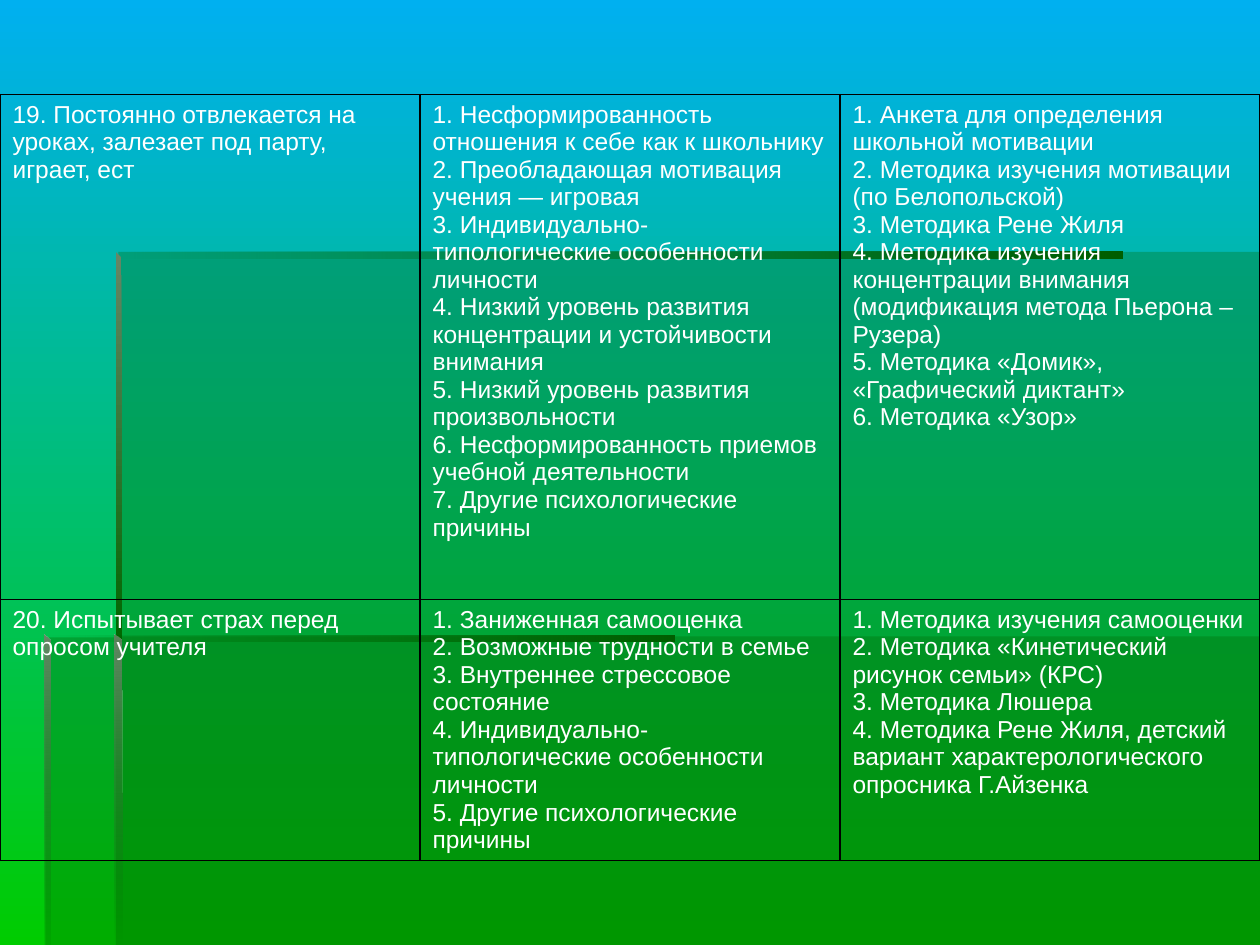
from lxml.etree import SubElement
from pptx import Presentation
from pptx.dml.color import RGBColor
from pptx.oxml import parse_xml
from pptx.oxml.ns import nsdecls, qn
from pptx.util import Inches, Pt

COLORS = {
    "sky": "00B0F0",
    "grass": "00CC00",
    "panel": "006600",
    "edge": "005E00",
    "haze": "668666",
    "text": "FFFFFF",
    "border": "000000",
}

PANELS = [
    [(0.92, 5.05), (0.92, 7.5), (10, 7.5), (10, 5.05)],
    [(0.94, 5.06), (0.36, 5.06), (0.36, 7.5), (10, 7.5), (10, 2), (0.94, 2)],
]

RIGHTWARD, DOWNWARD = 0, 270
FADE_IN = (("panel", 0), ("edge", 100))
BARS = [
    ([(0.92, 2), (0.92, 2.05), (8.91, 2.05), (8.91, 2)], FADE_IN, RIGHTWARD),
    ([(0.92, 2), (0.92, 5.1), (0.97, 5.1), (0.96, 2.04)],
     (("haze", 100), ("panel", 100)), DOWNWARD),
    ([(0.91, 7.5), (0.97, 7.5), (0.96, 5.08), (0.91, 5.04)],
     (("haze", 100), ("panel", 0)), DOWNWARD),
    ([(0.35, 5.04), (0.35, 5.09), (5.35, 5.09), (5.35, 5.04)], FADE_IN, RIGHTWARD),
    ([(0.35, 5.04), (0.35, 7.5), (0.4, 7.5), (0.4, 5.09)],
     (("haze", 100), ("panel", 10)), DOWNWARD),
]

ROW_HEIGHTS = [4.01, 2.06]
ROWS = [
    [
        ["19. Постоянно отвлекается на уроках, залезает под парту, играет, ест"],
        [
            "1. Несформированность отношения к себе как к школьнику",
            "2. Преобладающая мотивация учения — игровая",
            "3. Индивидуально-типологические особенности личности",
            "4. Низкий уровень развития концентрации и устойчивости внимания",
            "5. Низкий уровень развития произвольности",
            "6. Несформированность приемов учебной деятельности",
            "7. Другие психологические причины",
        ],
        [
            "1. Анкета для определения школьной мотивации",
            "2. Методика изучения мотивации (по Белопольской)",
            "3. Методика Рене Жиля",
            "4. Методика изучения концентрации внимания "
            "(модификация метода Пьерона – Рузера)",
            "5. Методика «Домик», «Графический диктант»",
            "6. Методика «Узор»",
        ],
    ],
    [
        ["20. Испытывает страх перед опросом учителя"],
        [
            "1. Заниженная самооценка",
            "2. Возможные трудности в семье",
            "3. Внутреннее стрессовое состояние",
            "4. Индивидуально-типологические особенности личности",
            "5. Другие психологические причины",
        ],
        [
            "1. Методика изучения самооценки",
            "2. Методика «Кинетический рисунок семьи» (КРС)",
            "3. Методика Люшера",
            "4. Методика Рене Жиля, детский вариант "
            "характерологического опросника Г.Айзенка",
        ],
    ],
]


def color(name):
    return RGBColor.from_string(COLORS[name])


def set_gradient(fill, names, angle):
    fill.gradient()
    fill.gradient_angle = angle
    for stop, name in zip(fill.gradient_stops, names):
        stop.color.rgb = color(name)


def set_opacities(shape, percents):
    tints = shape._element.spPr.iter(qn("a:srgbClr"))
    for tint, percent in zip(tints, percents):
        SubElement(tint, qn("a:alpha"), val=str(percent * 1000))


def add_outline(page, points):
    corners = [(Inches(x), Inches(y)) for x, y in points]
    builder = page.shapes.build_freeform(*corners[0])
    builder.add_line_segments(corners[1:], close=True)
    shape = builder.convert_to_shape()
    shape.shadow.inherit = False
    shape.line.fill.background()
    return shape


def add_panel(page, points):
    shape = add_outline(page, points)
    shape.fill.solid()
    shape.fill.fore_color.rgb = color("panel")
    set_opacities(shape, [30])


def add_bar(page, points, stops, angle):
    shape = add_outline(page, points)
    names, percents = zip(*stops)
    set_gradient(shape.fill, names, angle)
    set_opacities(shape, percents)


def set_borders(cell):
    properties = cell._tc.get_or_add_tcPr()
    for index, side in enumerate(("lnL", "lnR", "lnT", "lnB")):
        properties.insert(index, parse_xml(
            f'<a:{side} {nsdecls("a")} w="{Pt(0.75)}"><a:solidFill>'
            f'<a:srgbClr val="{COLORS["border"]}"/></a:solidFill></a:{side}>'))


def fill_cell(cell, lines):
    cell.fill.background()
    set_borders(cell)
    cell.text_frame.text = "\n".join(lines)
    for para in cell.text_frame.paragraphs:
        para.font.name = "Arial"
        para.font.size = Pt(14)
        para.font.color.rgb = color("text")


def add_methods_table(page):
    frame = page.shapes.add_table(
        len(ROWS), len(ROWS[0]), Inches(0), Inches(0.75),
        Inches(10), Inches(sum(ROW_HEIGHTS)))
    table = frame.table
    table.first_row = False
    table.horz_banding = False
    for row, height, contents in zip(table.rows, ROW_HEIGHTS, ROWS):
        row.height = Inches(height)
        for cell, lines in zip(row.cells, contents):
            fill_cell(cell, lines)


def main():
    deck = Presentation()
    deck.slide_width = Inches(10)
    deck.slide_height = Inches(7.5)
    page = deck.slides.add_slide(deck.slide_layouts[6])
    set_gradient(page.background.fill, ("sky", "grass"), DOWNWARD)
    for points in PANELS:
        add_panel(page, points)
    for points, stops, angle in BARS:
        add_bar(page, points, stops, angle)
    add_methods_table(page)
    deck.save("out.pptx")


if __name__ == "__main__":
    main()
